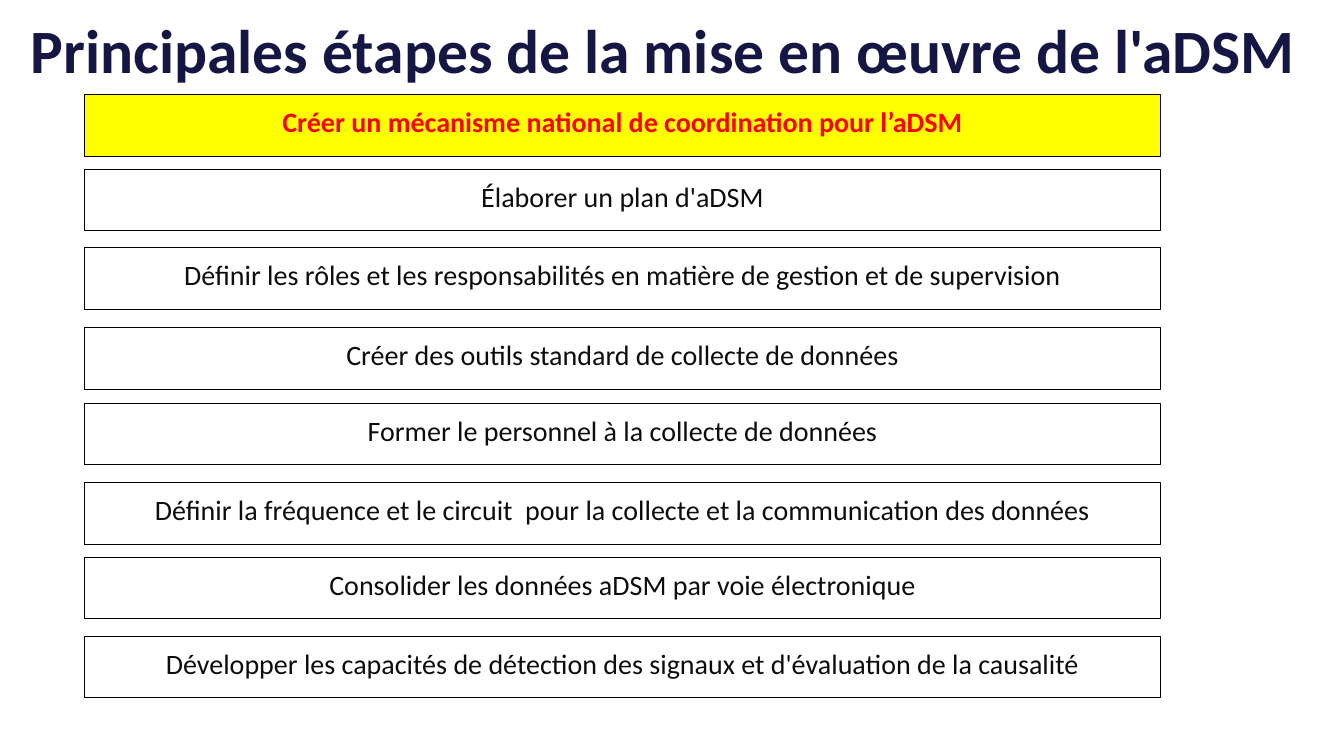
import pptx
import pptx.util
import pptx.dml.color
import pptx.enum.shapes
import pptx.enum.text
from pptx.util import Inches, Pt
from pptx.dml.color import RGBColor

NAVY = RGBColor(0x16, 0x16, 0x45)
YELLOW = RGBColor(0xFF, 0xFF, 0x00)
RED = RGBColor(0xFF, 0x00, 0x00)
WHITE = RGBColor(0xFF, 0xFF, 0xFF)
BLACK = RGBColor(0x00, 0x00, 0x00)
INK = RGBColor(0x0D, 0x0D, 0x0D)

STEP_HEIGHT = 0.61
# Each step: distance from the top of the list, wording
STEPS = [
    (0, "Créer un mécanisme national de coordination pour l’aDSM"),
    (0.74, "Élaborer un plan d'aDSM"),
    (1.52, "Définir les rôles et les responsabilités en matière de gestion et de supervision"),
    (2.31, "Créer des outils standard de collecte de données"),
    (3.06, "Former le personnel à la collecte de données"),
    (3.85, "Définir la fréquence et le circuit  pour la collecte et la communication des données"),
    (4.59, "Consolider les données aDSM par voie électronique"),
    (5.37, "Développer les capacités de détection des signaux et d'évaluation de la causalité"),
]


def write_centred(frame, text, size, colour, bold):
    frame.word_wrap = True
    paragraph = frame.paragraphs[0]
    paragraph.text = text
    paragraph.alignment = pptx.enum.text.PP_ALIGN.CENTER
    paragraph.font.name = "Calibri"
    paragraph.font.size = Pt(size)
    paragraph.font.bold = bold
    paragraph.font.color.rgb = colour
    return paragraph


def add_title(slide, left, top, width, height):
    title = slide.shapes.add_textbox(Inches(left), Inches(top), Inches(width), Inches(height))
    title.text_frame.vertical_anchor = pptx.enum.text.MSO_ANCHOR.MIDDLE
    write_centred(title.text_frame, "Principales étapes de la mise en œuvre de l'aDSM", 44, NAVY, True)


def add_steps(slide, left, top, width):
    for index, (offset, wording) in enumerate(STEPS):
        current = index == 0  # the first step is highlighted
        step = slide.shapes.add_shape(
            pptx.enum.shapes.MSO_SHAPE.RECTANGLE,
            Inches(left), Inches(top + offset), Inches(width), Inches(STEP_HEIGHT))
        step.shadow.inherit = False
        step.fill.solid()
        step.fill.fore_color.rgb = YELLOW if current else WHITE
        step.line.color.rgb = BLACK
        step.line.width = Pt(0.75)
        step.text_frame.vertical_anchor = pptx.enum.text.MSO_ANCHOR.TOP
        label = write_centred(step.text_frame, wording, 20, RED if current else INK, current)
        label.line_spacing = 1.15
        label.space_after = Pt(10)


def main():
    deck = pptx.Presentation()
    deck.slide_width = Inches(13.33)
    deck.slide_height = Inches(7.5)
    slide = deck.slides.add_slide(deck.slide_layouts[6])
    add_title(slide, 0.13, 0.05, 12.91, 0.87)
    add_steps(slide, 0.84, 0.94, 10.67)
    deck.save("out.pptx")


if __name__ == "__main__":
    main()
